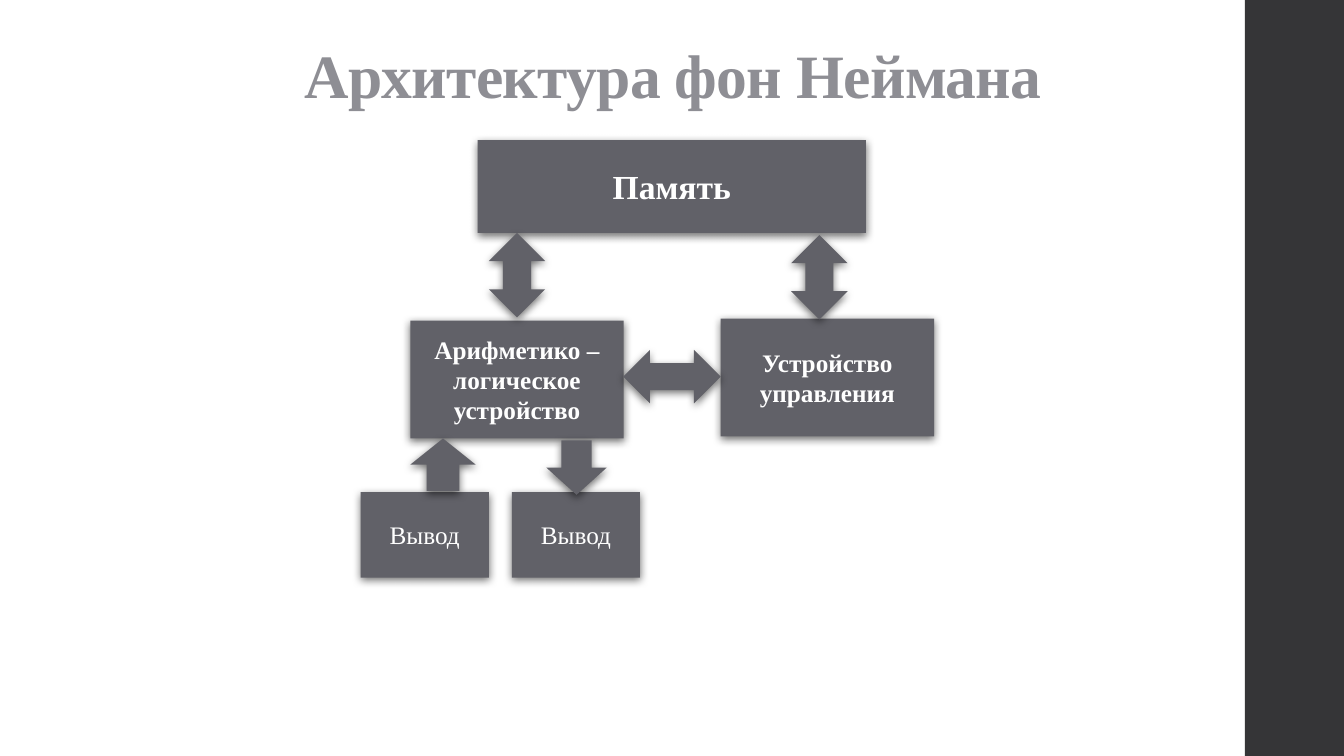
from dataclasses import dataclass

from lxml.etree import SubElement
from pptx import Presentation
from pptx.dml.color import RGBColor
from pptx.enum.shapes import MSO_SHAPE
from pptx.enum.text import MSO_ANCHOR, PP_ALIGN
from pptx.oxml.ns import qn
from pptx.shapes.autoshape import Shape
from pptx.slide import Slide
from pptx.text.text import TextFrame
from pptx.util import Cm, Pt

FONT = "Times New Roman"
GREY = "616168"
WHITE = "FFFFFF"
UNIT_W, UNIT_H = 5.38, 2.97
PORT_W, PORT_H, PORT_TOP = 3.23, 2.16, 12.4
LINK_W, LINK_H = 1.42, 2.13


@dataclass
class Block:
    left: float
    top: float
    width: float
    height: float
    text: str = ""
    size: int = 18
    bold: bool = True
    kind: MSO_SHAPE = MSO_SHAPE.RECTANGLE
    turn: int = 0


BLOCKS = [
    Block(12.04, 3.53, 9.78, 2.34, "Память", size=24),
    Block(10.34, 8.08, UNIT_W, UNIT_H, "Арифметико –логическое устройство"),
    Block(18.16, 8.03, UNIT_W, UNIT_H, "Устройство управления"),
    Block(12.9, PORT_TOP, PORT_W, PORT_H, "Вывод", bold=False),
    Block(9.09, PORT_TOP, PORT_W, PORT_H, "Вывод", bold=False),
    Block(12.32, 5.87, LINK_W, LINK_H, kind=MSO_SHAPE.UP_DOWN_ARROW),
    Block(19.94, 5.92, LINK_W, LINK_H, kind=MSO_SHAPE.UP_DOWN_ARROW),
    Block(16.26, 8.26, 1.35, 2.46, kind=MSO_SHAPE.UP_DOWN_ARROW, turn=270),
    Block(13.77, 11.1, 1.52, 1.37, kind=MSO_SHAPE.DOWN_ARROW),
    Block(10.34, 11.05, 1.65, 1.32, kind=MSO_SHAPE.UP_ARROW),
]


def color(code: str) -> RGBColor:
    return RGBColor.from_string(code)


def write(frame: TextFrame, text: str, size: int, bold: bool, code: str) -> None:
    """Set one centred, wrapped paragraph."""
    frame.word_wrap = True
    line = frame.paragraphs[0]
    line.text = text
    line.alignment = PP_ALIGN.CENTER
    line.font.name = FONT
    line.font.size = Pt(size)
    line.font.bold = bold
    line.font.color.rgb = color(code)


def shade(shape: Shape) -> None:
    """Give a soft black shadow that falls straight down."""
    effects = shape._element.spPr.find(qn("a:effectLst"))
    outer = SubElement(effects, qn("a:outerShdw"), blurRad=str(Pt(6)),
                       dist=str(Pt(2)), dir="5400000", rotWithShape="0")
    black = SubElement(outer, qn("a:srgbClr"), val="000000")
    SubElement(black, qn("a:alpha"), val="55000")


def draw(slide: Slide, block: Block, code: str) -> Shape:
    box = (Cm(n) for n in (block.left, block.top, block.width, block.height))
    shape = slide.shapes.add_shape(block.kind, *box)
    shape.rotation = block.turn
    shape.fill.solid()
    shape.fill.fore_color.rgb = color(code)
    shape.line.fill.background()
    shape.shadow.inherit = False
    if block.text:
        shape.text_frame.vertical_anchor = MSO_ANCHOR.MIDDLE
        write(shape.text_frame, block.text, block.size, block.bold, WHITE)
    return shape


def head(slide: Slide, text: str) -> None:
    """Place and format the slide title."""
    title = slide.shapes.title
    title.left, title.top = Cm(3.5), Cm(1.02)
    title.width, title.height = Cm(26.92), Cm(3.68)
    title.text_frame.vertical_anchor = MSO_ANCHOR.TOP
    write(title.text_frame, text, 44, True, "8E8E94")
    line = title.text_frame.paragraphs[0]
    line.line_spacing = 0.9
    line.runs[0].font._element.set("spc", "-50")


def main() -> None:
    deck = Presentation()
    deck.slide_width, deck.slide_height = Cm(33.87), Cm(19.05)
    slide = deck.slides.add_slide(deck.slide_layouts[5])
    draw(slide, Block(31.37, 0, 2.5, 19.05), "353537")
    head(slide, "Архитектура фон Неймана")
    for block in BLOCKS:
        shade(draw(slide, block, GREY))
    deck.save("out.pptx")


if __name__ == "__main__":
    main()
